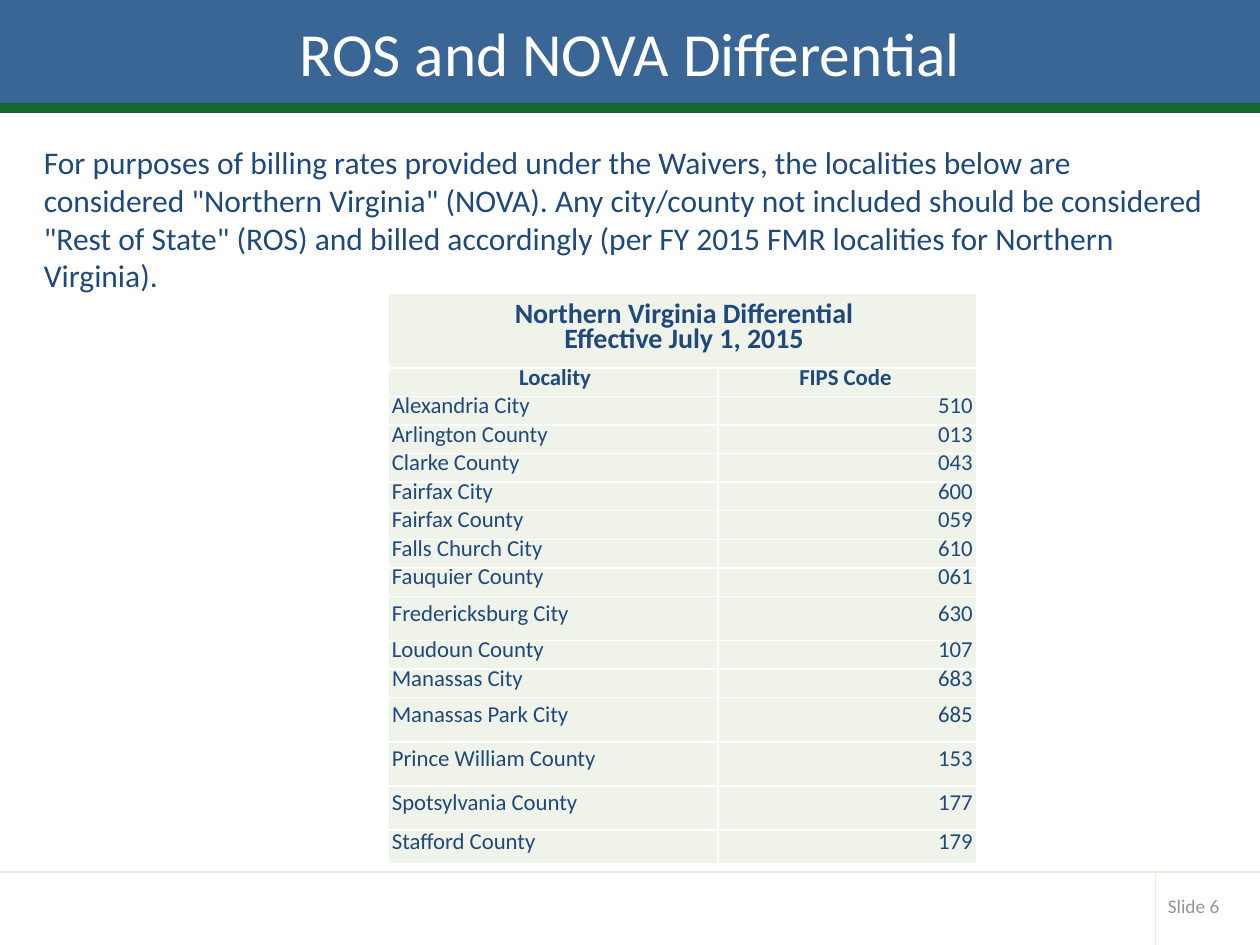
from lxml import etree
from pptx import Presentation
from pptx.dml.color import RGBColor
from pptx.enum.shapes import MSO_CONNECTOR, MSO_SHAPE
from pptx.enum.text import MSO_ANCHOR, PP_ALIGN
from pptx.oxml.ns import qn
from pptx.util import Inches, Pt

LEFT, CENTER, RIGHT = PP_ALIGN.LEFT, PP_ALIGN.CENTER, PP_ALIGN.RIGHT
MIDDLE = MSO_ANCHOR.MIDDLE
RECT = MSO_SHAPE.RECTANGLE
STRAIGHT = MSO_CONNECTOR.STRAIGHT
FONT = "Calibri"
COLORS = {"banner": "3A6695", "stripe": "136735", "rule": "EEECE1",
          "number": "969696", "text": "1F497D", "cell": "EFF3EA",
          "white": "FFFFFF"}

LOCALITIES = [
    ("Alexandria City", "510"), ("Arlington County", "013"),
    ("Clarke County", "043"), ("Fairfax City", "600"),
    ("Fairfax County", "059"), ("Falls Church City", "610"),
    ("Fauquier County", "061"), ("Fredericksburg City", "630"),
    ("Loudoun County", "107"), ("Manassas City", "683"),
    ("Manassas Park City", "685"), ("Prince William County", "153"),
    ("Spotsylvania County", "177"), ("Stafford County", "179"),
]
TALL = {"Fredericksburg City", "Manassas Park City",
        "Prince William County", "Spotsylvania County"}
INTRO = ('For purposes of billing rates provided under the Waivers, the '
         'localities below are considered "Northern Virginia" (NOVA). Any '
         'city/county not included should be considered "Rest of State" (ROS) '
         'and billed accordingly (per FY 2015 FMR localities for Northern '
         'Virginia).')

TABLE_HEIGHT, TITLE_ROW, TALL_ROW, LAST_ROW = 4.53, 0.59, 0.35, 0.27
COLUMNS = (2.62, 2.05)


def rgb(name):
    return RGBColor.from_string(COLORS[name])


def add_run(p, text, size, color, bold=False):
    r = p.add_run()
    r.text = text
    r.font.name, r.font.size, r.font.bold = FONT, Pt(size), bold
    r.font.color.rgb = rgb(color)


def add_band(s, top, height, color):
    sp = s.shapes.add_shape(RECT, 0, Inches(top), Inches(10), Inches(height))
    sp.shadow.inherit = False
    sp.fill.solid()
    sp.fill.fore_color.rgb = rgb(color)
    sp.line.color.rgb = rgb(color)
    sp.line.width = Pt(2)


def add_rule(s, x1, y1, x2, y2):
    line = s.shapes.add_connector(
        STRAIGHT, Inches(x1), Inches(y1), Inches(x2), Inches(y2))
    line.line.color.rgb = rgb("rule")
    line.line.width = Pt(1)
    etree.SubElement(line.element.spPr, qn("a:effectLst"))


def add_text(s, box, text, size, color):
    sp = s.shapes.add_textbox(*(Inches(v) for v in box))
    tf = sp.text_frame
    tf.word_wrap = True
    tf.vertical_anchor = MIDDLE
    add_run(tf.paragraphs[0], text, size, color)


def set_title(s, text):
    sp = s.shapes.title
    sp.left, sp.top, sp.width, sp.height = 0, 0, Inches(10), Inches(0.83)
    # Bring the title in front of the banner
    sp.element.getparent().append(sp.element)
    tf = sp.text_frame
    tf.vertical_anchor = MIDDLE
    p = tf.paragraphs[0]
    p.alignment = CENTER
    add_run(p, text, 35, "white")


def style_cell(cell, column):
    tcPr = cell._tc.get_or_add_tcPr()
    for side in ("lnL", "lnR", "lnT", "lnB"):
        ln = etree.SubElement(tcPr, qn(f"a:{side}"), w=str(Pt(1)))
        fill = etree.SubElement(ln, qn("a:solidFill"))
        etree.SubElement(fill, qn("a:srgbClr"), val=COLORS["white"])
    cell.fill.solid()
    cell.fill.fore_color.rgb = rgb("cell")
    cell.vertical_anchor = MIDDLE
    cell.margin_top = cell.margin_bottom = 0
    cell.margin_left = Inches(0.03 if column == 0 else 0)
    cell.margin_right = Inches(0.03 if column == 1 else 0)


def fill_cell(cell, lines, size, align, spacing, after, bold=False):
    p = cell.text_frame.paragraphs[0]
    p.alignment = align
    p.line_spacing, p.space_after = Pt(spacing), Pt(after)
    for i, text in enumerate(lines):
        if i:
            p.add_line_break()
        add_run(p, text, size, "text", bold)


def row_heights():
    small_count = len(LOCALITIES) - len(TALL)  # header row in, last row out
    small = (TABLE_HEIGHT - TITLE_ROW - LAST_ROW
             - len(TALL) * TALL_ROW) / small_count
    body = [TALL_ROW if name in TALL else small for name, _ in LOCALITIES[:-1]]
    return [TITLE_ROW, small, *body, LAST_ROW]


def add_locality_table(s):
    heights = row_heights()
    table = s.shapes.add_table(
        len(heights), len(COLUMNS), Inches(3.08), Inches(2.33),
        Inches(sum(COLUMNS)), Inches(TABLE_HEIGHT)).table
    table.first_row = table.horz_banding = False
    for col, width in zip(table.columns, COLUMNS):
        col.width = Inches(width)
    for row, height in zip(table.rows, heights):
        row.height = Inches(height)
        for column, cell in enumerate(row.cells):
            style_cell(cell, column)

    # Heading across both columns
    heading = table.cell(0, 0)
    heading.merge(table.cell(0, 1))
    fill_cell(heading, ["Northern Virginia Differential",
                        "Effective July 1, 2015"], 16, CENTER, 14.4, 1.2, True)

    # Column names
    for column, name in enumerate(("Locality", "FIPS Code")):
        fill_cell(table.cell(1, column), [name], 13, CENTER, 10.4, 0.7, True)

    # Localities and codes
    for row, values in enumerate(LOCALITIES, start=2):
        for column, align in enumerate((LEFT, RIGHT)):
            fill_cell(table.cell(row, column), [values[column]],
                      13, align, 10.1, 0.6)


def main():
    prs = Presentation()
    prs.slide_width, prs.slide_height = Inches(10), Inches(7.5)
    s = prs.slides.add_slide(prs.slide_layouts[5])

    # Banner and footer
    add_band(s, 0, 0.83, "banner")
    add_band(s, 0.83, 0.05, "stripe")
    add_rule(s, 0, 6.92, 10, 6.92)
    add_rule(s, 9.17, 6.92, 9.17, 7.5)
    add_text(s, (9.17, 7.04, 0.74, 0.29), "Slide 6", 11, "number")

    # Content
    set_title(s, "ROS and NOVA Differential")
    add_locality_table(s)
    add_text(s, (0.25, 1.08, 9.5, 1.31), INTRO, 18, "text")

    prs.save("out.pptx")


if __name__ == "__main__":
    main()
